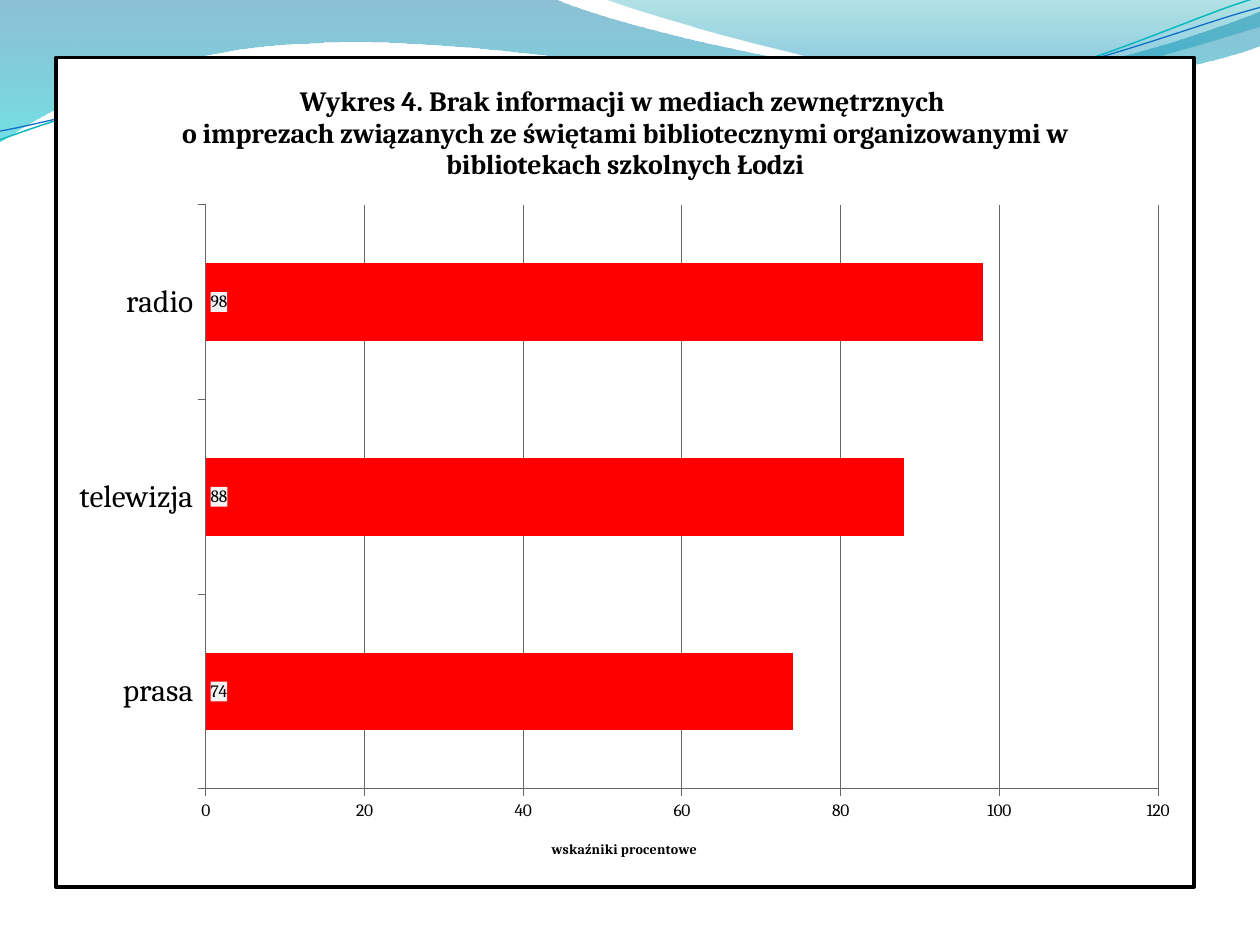
import math

import pptx
import pptx.chart.data
import pptx.dml.color
import pptx.enum.chart
import pptx.oxml
import pptx.oxml.ns
import pptx.util

Pt = pptx.util.Pt
FONT = "Cambria"
COLORS = {
    "black": "000000", "white": "FFFFFF", "bar": "FF0000", "grid": "666666",
    "label": "F2F2F2", "teal": "0AB8BF", "blue": "0F6FC6",
}

# Content
TITLE = [
    "Wykres 4. Brak informacji w mediach zewnętrznych ",
    "o imprezach związanych ze świętami bibliotecznymi organizowanymi w bibliotekach szkolnych Łodzi",
]
AXIS_TITLE = ["wskaźniki procentowe"]
MEDIA = {"prasa": 74, "telewizja": 88, "radio": 98}
CHART_BOX = (31, 31.8, 652.3, 476.2)
PLOT_BOX = (85.8, 84.5, 545.9, 335.3)  # inside the chart

# Waves: a start point, then lines (one point) or Bezier curves (three points)
# Gradient stops: position %, colour, opacity %
TILT = 357.3
WAVES = [
    {"start": (0, 0), "stops": [(0, "0074A1", 45), (100, "00C6CF", 55)], "steps": [
        [(316.8, -0.7)],
        [(342.7, 12.2), (478.1, 45.4), (545.8, 45.4)],
        [(614.2, 45.4), (689.8, 18.7), (720, 6.5)],
        [(720.7, 25.9)],
        [(707.8, 31.7), (626.4, 54.7), (537.1, 54)],
        [(447.8, 54), (275, 20.2), (185, 24.5)],
        [(92.9, 25.9), (33.1, 59.8), (-0.7, 81.4)],
        [(0, 0)]]},
    {"start": (344.9, -0.7), "stops": [(0, "00A1A9", 30), (80, "008BBF", 45)], "steps": [
        [(366.5, 7.9), (491, 44.6), (553.7, 46.8)],
        [(616.3, 49.7), (691.9, 23), (720, 15.1)],
        [(720, 0)],
        [(344.9, -0.7)]]},
    {"start": (0, 79.9), "line": ("teal", 0.85), "pivot": (359.3, 41.4), "steps": [
        [(34.6, 67), (113.8, 41), (199.4, 37.4)],
        [(284.4, 33.8), (427, 64.1), (513.4, 57.6)],
        [(599.8, 51.1), (675.4, 10.8), (718.6, -1.4)]]},
    {"start": (0, 74.9), "line": ("blue", 0.75), "pivot": (359.6, 42.5), "steps": [
        [(33.8, 69.1), (118.1, 43.9), (203.8, 40.3)],
        [(290.2, 36.7), (429.8, 60.5), (516.2, 54)],
        [(601.9, 48.2), (677.5, 15.1), (720, 4.3)]]},
]


def rgb(name):
    return pptx.dml.color.RGBColor.from_string(COLORS[name])


def style_font(font, size, bold=False, color="black"):
    font.name, font.size, font.bold = FONT, Pt(size), bold
    font.color.rgb = rgb(color)


def write(frame, lines, **style):
    for number, line in enumerate(lines):
        para = frame.add_paragraph() if number else frame.paragraphs[0]
        span = para.add_run()
        span.text = line
        style_font(span.font, **style)


def untilt(point, pivot):
    """Turn a point back about the pivot, so that the shape's tilt restores it."""
    angle = math.radians(-TILT)
    dx, dy = point[0] - pivot[0], point[1] - pivot[1]
    return (pivot[0] + dx * math.cos(angle) - dy * math.sin(angle),
            pivot[1] + dx * math.sin(angle) + dy * math.cos(angle))


def gradient(stops):
    marks = "".join(
        f'<a:gs pos="{place * 1000}"><a:srgbClr val="{color}">'
        f'<a:alpha val="{opacity * 1000}"/></a:srgbClr></a:gs>'
        for place, color, opacity in stops)
    return pptx.oxml.parse_xml(
        f'<a:gradFill {pptx.oxml.ns.nsdecls("a")} rotWithShape="1"><a:gsLst>{marks}</a:gsLst>'
        '<a:lin ang="5400000" scaled="1"/></a:gradFill>')


def bend(shape, steps):
    """Join each three line points that belong to one curve."""
    lines = iter(shape.element.xpath(".//a:path/a:lnTo"))
    for step in steps:
        parts = [next(lines) for point in step]
        if len(parts) == 3:
            curve = pptx.oxml.parse_xml(f'<a:cubicBezTo {pptx.oxml.ns.nsdecls("a")}/>')
            parts[0].addprevious(curve)
            for part in parts:
                curve.append(part[0])
                part.getparent().remove(part)


def draw_wave(page, wave):
    filled = "stops" in wave
    points = [wave["start"]] + [point for step in wave["steps"] for point in step]
    if "pivot" in wave:
        points = [untilt(point, wave["pivot"]) for point in points]
    points = [(Pt(x), Pt(y)) for x, y in points]
    builder = page.shapes.build_freeform(*points[0], scale=1.0)
    builder.add_line_segments(points[1:], close=filled)
    shape = builder.convert_to_shape()
    bend(shape, wave["steps"])
    shape.shadow.inherit = False
    shape.fill.background()
    if filled:
        shape.line.fill.background()
        blank_fill = shape.element.spPr.find(pptx.oxml.ns.qn("a:noFill"))
        blank_fill.getparent().replace(blank_fill, gradient(wave["stops"]))
    else:
        shape.rotation = TILT
        color, width = wave["line"]
        shape.line.color.rgb, shape.line.width = rgb(color), Pt(width)


def box_format(parent, fill, line=""):
    """Give a chart part a fill and border, ahead of its text format."""
    box = pptx.oxml.parse_xml(
        f'<c:spPr {pptx.oxml.ns.nsdecls("c", "a")}><a:solidFill>'
        f'<a:srgbClr val="{COLORS[fill]}"/></a:solidFill>{line}</c:spPr>')
    parent.find(pptx.oxml.ns.qn("c:txPr")).addprevious(box)


def add_media_chart(page):
    data = pptx.chart.data.CategoryChartData()
    data.categories = list(MEDIA)
    data.add_series("Series 1", list(MEDIA.values()))
    kinds = pptx.enum.chart
    chart = page.shapes.add_chart(
        kinds.XL_CHART_TYPE.BAR_CLUSTERED, *map(Pt, CHART_BOX), data).chart
    style_font(chart.font, 10)
    chart.has_legend = False
    write(chart.chart_title.text_frame, TITLE, size=16, bold=True)
    chart.chart_title.include_in_layout = False

    # Axes
    for axis, size in ((chart.category_axis, 18), (chart.value_axis, 10)):
        style_font(axis.tick_labels.font, size)
        axis.major_tick_mark = kinds.XL_TICK_MARK.OUTSIDE
        axis.minor_tick_mark = kinds.XL_TICK_MARK.NONE
        axis.format.line.color.rgb = rgb("grid")
        axis.format.line.width = Pt(0.5)
    scale = chart.value_axis
    scale.minimum_scale, scale.maximum_scale, scale.major_unit = 0, 120, 20
    scale.has_major_gridlines = True
    scale.major_gridlines.format.line.color.rgb = rgb("grid")
    scale.major_gridlines.format.line.width = Pt(0.5)
    write(scale.axis_title.text_frame, AXIS_TITLE, size=8, bold=True)

    # Bars and their values
    plot = chart.plots[0]
    plot.vary_by_categories = False
    plot.gap_width = 150
    bars = plot.series[0]
    bars.format.fill.solid()
    bars.format.fill.fore_color.rgb = rgb("bar")
    labels = bars.data_labels
    labels.show_value = True
    labels.position = kinds.XL_LABEL_POSITION.INSIDE_BASE
    style_font(labels.font, 10)

    # Label background, frame and plot position
    space = chart.element
    box_format(space.xpath(".//c:ser/c:dLbls")[0], "label")
    box_format(space, "white",
               f'<a:ln w="{Pt(2)}"><a:solidFill><a:srgbClr val="{COLORS["black"]}"/>'
               '</a:solidFill></a:ln>')
    area = space.xpath(".//c:plotArea")[0]
    for old in area.xpath("./c:layout"):
        area.remove(old)
    places = "".join(f'<c:{side} val="{length / whole}"/>'
                     for side, length, whole in zip("xywh", PLOT_BOX, CHART_BOX[2:] * 2))
    area.insert(0, pptx.oxml.parse_xml(
        f'<c:layout {pptx.oxml.ns.nsdecls("c")}><c:manualLayout><c:layoutTarget val="inner"/>'
        f'<c:xMode val="edge"/><c:yMode val="edge"/>{places}</c:manualLayout></c:layout>'))


def main():
    deck = pptx.Presentation()
    deck.slide_width, deck.slide_height = Pt(720), Pt(540)
    page = deck.slides.add_slide(deck.slide_layouts[6])
    page.background.fill.solid()
    page.background.fill.fore_color.rgb = rgb("white")
    for wave in WAVES:
        draw_wave(page, wave)
    add_media_chart(page)
    deck.save("out.pptx")


if __name__ == "__main__":
    main()
